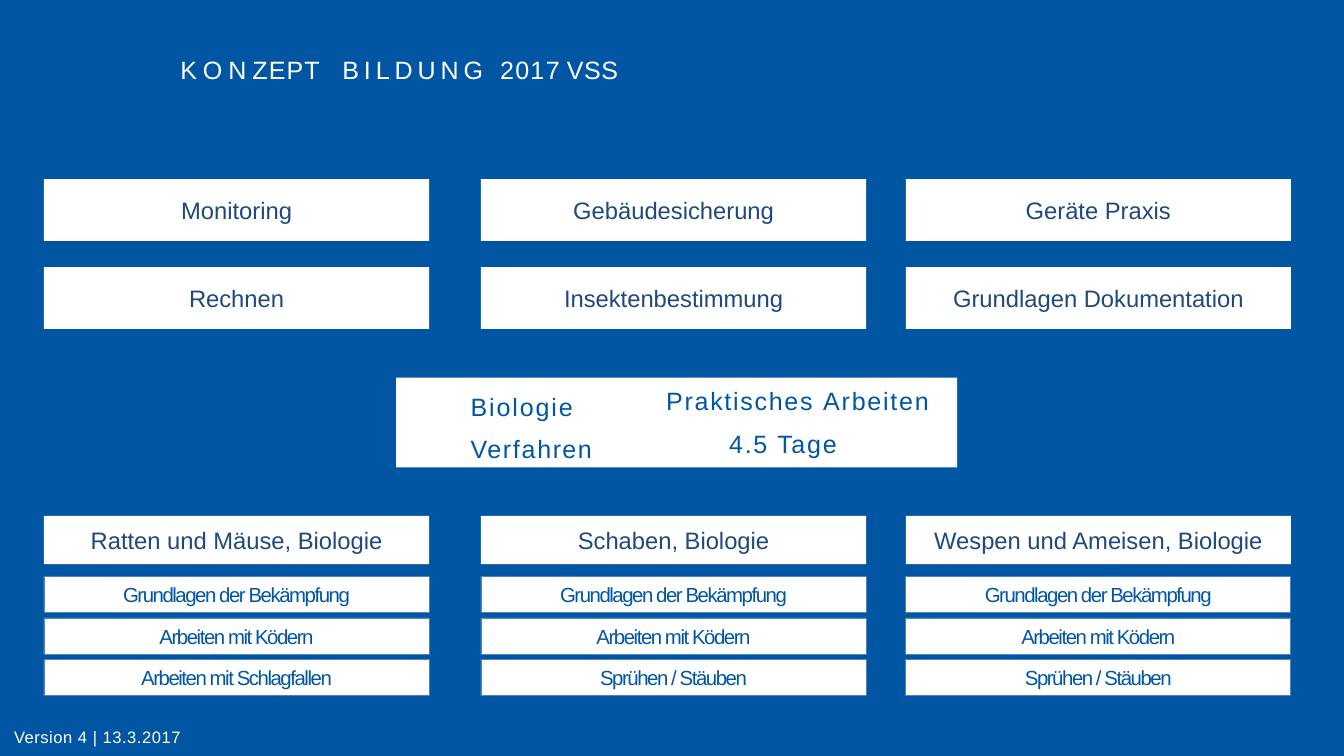
from dataclasses import dataclass

from pptx import Presentation
from pptx.dml.color import RGBColor
from pptx.enum.shapes import MSO_SHAPE
from pptx.enum.text import MSO_ANCHOR, PP_ALIGN
from pptx.shapes.autoshape import Shape
from pptx.slide import Slide
from pptx.util import Inches, Length, Pt

COLORS = {"blue": "0056A3", "navy": "1F497D", "outline": "4F81BD", "white": "FFFFFF"}
FONT = "Arial"
COLUMN_LEFTS = (0.72, 7.87, 14.82)
COLUMN_WIDTH = 6.3
METHOD_TOP, METHOD_PITCH = 9.43, 0.68


@dataclass(frozen=True)
class BoxStyle:
    height: float
    size: float
    color: str
    letter_spacing: float = 0
    outlined: bool = False


@dataclass(frozen=True)
class BoxRow:
    top: float
    style: BoxStyle
    labels: tuple[str, str, str]


@dataclass(frozen=True)
class Label:
    left: float
    top: float
    width: float
    height: float
    size: float
    color: str
    runs: tuple[tuple[str, float], ...]  # text and letter spacing in points
    line_spacing: float | Length | None = None


TOPIC = BoxStyle(1.01, 28, "navy")
PEST = BoxStyle(0.79, 28, "navy")
METHOD = BoxStyle(0.59, 24, "blue", -1.7, True)

METHOD_LABELS = (
    ("Grundlagen der Bekämpfung",) * 3,
    ("Arbeiten mit Ködern",) * 3,
    ("Arbeiten mit Schlagfallen", "Sprühen / Stäuben", "Sprühen / Stäuben"),
)
ROWS = [
    BoxRow(2.93, TOPIC, ("Monitoring", "Gebäudesicherung", "Geräte Praxis")),
    BoxRow(4.37, TOPIC, ("Rechnen", "Insektenbestimmung", "Grundlagen Dokumentation")),
    BoxRow(8.44, PEST, ("Ratten und Mäuse, Biologie", "Schaben, Biologie",
                        "Wespen und Ameisen, Biologie")),
] + [
    BoxRow(METHOD_TOP + index * METHOD_PITCH, METHOD, labels)
    for index, labels in enumerate(METHOD_LABELS)
]

LABELS = (
    Label(2.95, 0.89, 10.88, 0.5, 29.5, "white",
          (("KON", 7), ("ZEP", 1.3), ("T ", 9.4), ("BILDUNG ", 5.8),
           ("201", 1.5), ("7 ", 0.1), ("VSS", 0.6))),
    Label(7.7, 6.22, 2.02, 1.38, 29.5, "blue",
          (("Biologie ", 2.2), ("V", -1.7), ("erfah", 2), ("r", 1.3), ("en", 1.8)), 1.39),
    Label(10.9, 6.31, 4.39, 0.5, 29.5, "blue", (("Praktisches ", 2), ("Arbeiten", 2.1))),
    Label(11.93, 7.01, 2.12, 0.5, 29.5, "blue", (("4.5 Tage", 2),)),
    Label(0.23, 11.93, 6.18, 0.29, 19.5, "white", (("Version 4 | 13.3.2017", 0.6),), Pt(20.9)),
)


def rgb(name: str) -> RGBColor:
    return RGBColor.from_string(COLORS[name])


def write_runs(shape: Shape, runs: tuple[tuple[str, float], ...], size: float, color: str) -> None:
    frame = shape.text_frame
    frame.word_wrap = True
    frame.margin_left = frame.margin_right = frame.margin_top = frame.margin_bottom = 0
    for text, letter_spacing in runs:
        run = frame.paragraphs[0].add_run()
        run.text = text
        run.font.name = FONT
        run.font.size = Pt(size)
        run.font.color.rgb = rgb(color)
        if letter_spacing:
            run.font._element.set("spc", str(round(letter_spacing * 100)))


def add_panel(slide: Slide, left: float, top: float, width: float, height: float) -> Shape:
    shape = slide.shapes.add_shape(
        MSO_SHAPE.RECTANGLE, Inches(left), Inches(top), Inches(width), Inches(height))
    shape.shadow.inherit = False
    shape.fill.solid()
    shape.fill.fore_color.rgb = rgb("white")
    shape.line.fill.background()
    return shape


def add_box(slide: Slide, left: float, top: float, text: str, style: BoxStyle) -> None:
    shape = add_panel(slide, left, top, COLUMN_WIDTH, style.height)
    if style.outlined:
        shape.line.color.rgb = rgb("outline")
        shape.line.width = Pt(0.75)
    write_runs(shape, ((text, style.letter_spacing),), style.size, style.color)
    shape.text_frame.vertical_anchor = MSO_ANCHOR.MIDDLE
    shape.text_frame.paragraphs[0].alignment = PP_ALIGN.CENTER


def add_label(slide: Slide, label: Label) -> None:
    shape = slide.shapes.add_textbox(
        Inches(label.left), Inches(label.top), Inches(label.width), Inches(label.height))
    write_runs(shape, label.runs, label.size, label.color)
    if label.line_spacing:
        shape.text_frame.paragraphs[0].line_spacing = label.line_spacing


def main() -> None:
    presentation = Presentation()
    presentation.slide_width = Inches(21.99)
    presentation.slide_height = Inches(12.37)
    slide = presentation.slides.add_slide(presentation.slide_layouts[6])

    # Blue background
    slide.background.fill.solid()
    slide.background.fill.fore_color.rgb = rgb("blue")

    # Central panel, title and footer
    add_panel(slide, 6.48, 6.18, 9.18, 1.47)
    for label in LABELS:
        add_label(slide, label)

    # Course modules in three columns
    for row in ROWS:
        for left, text in zip(COLUMN_LEFTS, row.labels):
            add_box(slide, left, row.top, text, row.style)

    presentation.save("out.pptx")


if __name__ == "__main__":
    main()
